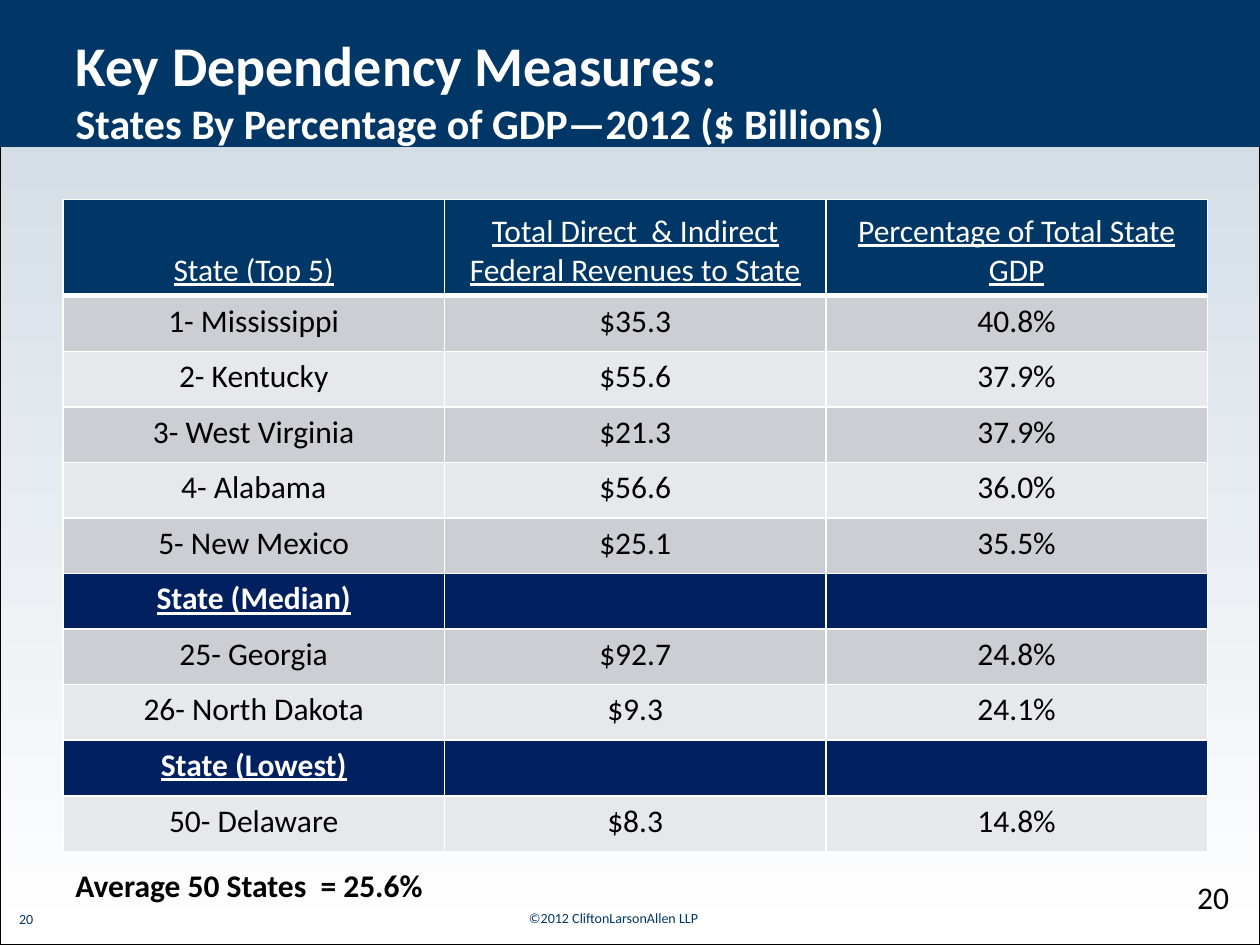
from lxml import etree
from pptx import Presentation
from pptx.dml.color import RGBColor
from pptx.enum import shapes, text
from pptx.oxml import ns
from pptx.util import Pt

NAVY = RGBColor(0x00, 0x37, 0x67)
MIDNIGHT = RGBColor(0x00, 0x20, 0x60)
GREY = RGBColor(0xCC, 0xCE, 0xD3)
PALE = RGBColor(0xE7, 0xE8, 0xEB)
SKY = RGBColor(0xCC, 0xD7, 0xE1)
WHITE = RGBColor(0xFF, 0xFF, 0xFF)
BLACK = RGBColor(0x00, 0x00, 0x00)
FONT = "Calibri"
WIDTH, HEIGHT = 720, 540

HEADER = ("State (Top 5)", "Total Direct  & Indirect Federal Revenues to State",
          "Percentage of Total State GDP")
ROWS = [
    ("1- Mississippi", "$35.3", "40.8%"),
    ("2- Kentucky", "$55.6", "37.9%"),
    ("3- West Virginia", "$21.3", "37.9%"),
    ("4- Alabama", "$56.6", "36.0%"),
    ("5- New Mexico", "$25.1", "35.5%"),
    ("State (Median)", "", ""),
    ("25- Georgia", "$92.7", "24.8%"),
    ("26- North Dakota", "$9.3", "24.1%"),
    ("State (Lowest)", "", ""),
    ("50- Delaware", "$8.3", "14.8%"),
]


def add_run(paragraph, words, size, color, bold=False, underline=False):
    run = paragraph.add_run()
    run.text = words
    font = run.font
    font.name, font.size, font.bold, font.underline = FONT, Pt(size), bold, underline
    font.color.rgb = color


def add_label(slide, box, words, size, color, bold=False, align=text.PP_ALIGN.LEFT):
    label = slide.shapes.add_textbox(*map(Pt, box))
    label.text_frame.word_wrap = True
    paragraph = label.text_frame.paragraphs[0]
    paragraph.alignment = align
    add_run(paragraph, words, size, color, bold)


def add_rectangle(slide, box):
    shape = slide.shapes.add_shape(shapes.MSO_SHAPE.RECTANGLE, *map(Pt, box))
    shape.shadow.inherit = False
    return shape


def set_background(slide):
    fill = slide.background.fill
    fill.gradient()
    fill.gradient_angle = 270
    for stop, position, color in zip(fill.gradient_stops, (0, 1), (SKY, WHITE)):
        stop.position = position
        stop.color.rgb = color


def add_frame(slide, box):
    frame = add_rectangle(slide, box)
    frame.fill.background()
    frame.line.color.rgb = BLACK
    frame.line.width = Pt(0.75)


def add_title(slide, box):
    left, top, width, height = box
    band = add_rectangle(slide, box)
    band.fill.solid()
    band.fill.fore_color.rgb = NAVY
    band.line.fill.background()

    title = slide.shapes.title
    slide.shapes._spTree.append(title._element)
    title.left, title.top = Pt(left + 36), Pt(top + 24)
    title.width, title.height = Pt(width - 72), Pt(54)
    frame = title.text_frame
    frame.word_wrap = True
    frame.auto_size = text.MSO_AUTO_SIZE.NONE
    frame.vertical_anchor = text.MSO_ANCHOR.MIDDLE
    paragraph = frame.paragraphs[0]
    paragraph.alignment = text.PP_ALIGN.LEFT
    add_run(paragraph, "Key Dependency Measures: ", 32, WHITE, True)
    paragraph.add_line_break()
    add_run(paragraph, "States By Percentage of GDP—2012 ($ Billions)", 24, WHITE, True)


def set_borders(cell, bottom):
    properties = cell._tc.get_or_add_tcPr()
    for side, width in (("L", 1), ("R", 1), ("T", 1), ("B", bottom)):
        line = etree.SubElement(properties, ns.qn(f"a:ln{side}"), w=str(Pt(width)))
        fill = etree.SubElement(line, ns.qn("a:solidFill"))
        etree.SubElement(fill, ns.qn("a:srgbClr"), val=str(WHITE))


def add_state_table(slide, box):
    left, top, width, height = box
    header_height = 55
    graphic = slide.shapes.add_table(len(ROWS) + 1, len(HEADER), *map(Pt, box))
    table = graphic.table
    for column in table.columns:
        column.width = Pt(width / len(HEADER))
    for index, values in enumerate([HEADER] + ROWS):
        is_header = index == 0
        is_section = not is_header and not values[1]
        is_heading = is_header or is_section
        if is_header:
            fill = NAVY
        elif is_section:
            fill = MIDNIGHT
        else:
            fill = GREY if index % 2 else PALE
        table.rows[index].height = Pt(header_height if is_header
                                      else (height - header_height) / len(ROWS))
        for cell, words in zip(table.rows[index].cells, values):
            set_borders(cell, 3 if is_header else 1)
            cell.fill.solid()
            cell.fill.fore_color.rgb = fill
            cell.vertical_anchor = (text.MSO_ANCHOR.BOTTOM if is_header
                                    else text.MSO_ANCHOR.TOP)
            if words:
                paragraph = cell.text_frame.paragraphs[0]
                paragraph.alignment = text.PP_ALIGN.CENTER
                add_run(paragraph, words, 18, WHITE if is_heading else BLACK,
                        is_section, is_heading)


def add_footer(slide, box):
    left, top, width, height = box
    center = text.PP_ALIGN.CENTER
    add_label(slide, (left + 294, top + 24.5, 113.5, 17), "©2012 CliftonLarsonAllen LLP",
              8, NAVY, align=center)
    add_label(slide, (left, top + 25, 30, 17), "20", 8, NAVY, align=center)
    add_label(slide, (left + width - 43, top + 6.5, 39.5, 29), "20", 18, BLACK)
    add_label(slide, (left + 36, top, 222, 29), "Average 50 States  = 25.6%",
              18, BLACK, True)


def main():
    presentation = Presentation()
    presentation.slide_width, presentation.slide_height = Pt(WIDTH), Pt(HEIGHT)
    slide = presentation.slides.add_slide(presentation.slide_layouts[5])
    set_background(slide)
    add_frame(slide, (0, 0, WIDTH, HEIGHT))
    add_title(slide, (0, 0, WIDTH, 84))
    add_state_table(slide, (36, 114, 654, 372.5))
    add_footer(slide, (0, 491.5, WIDTH, 48.5))
    presentation.save("out.pptx")


if __name__ == "__main__":
    main()
